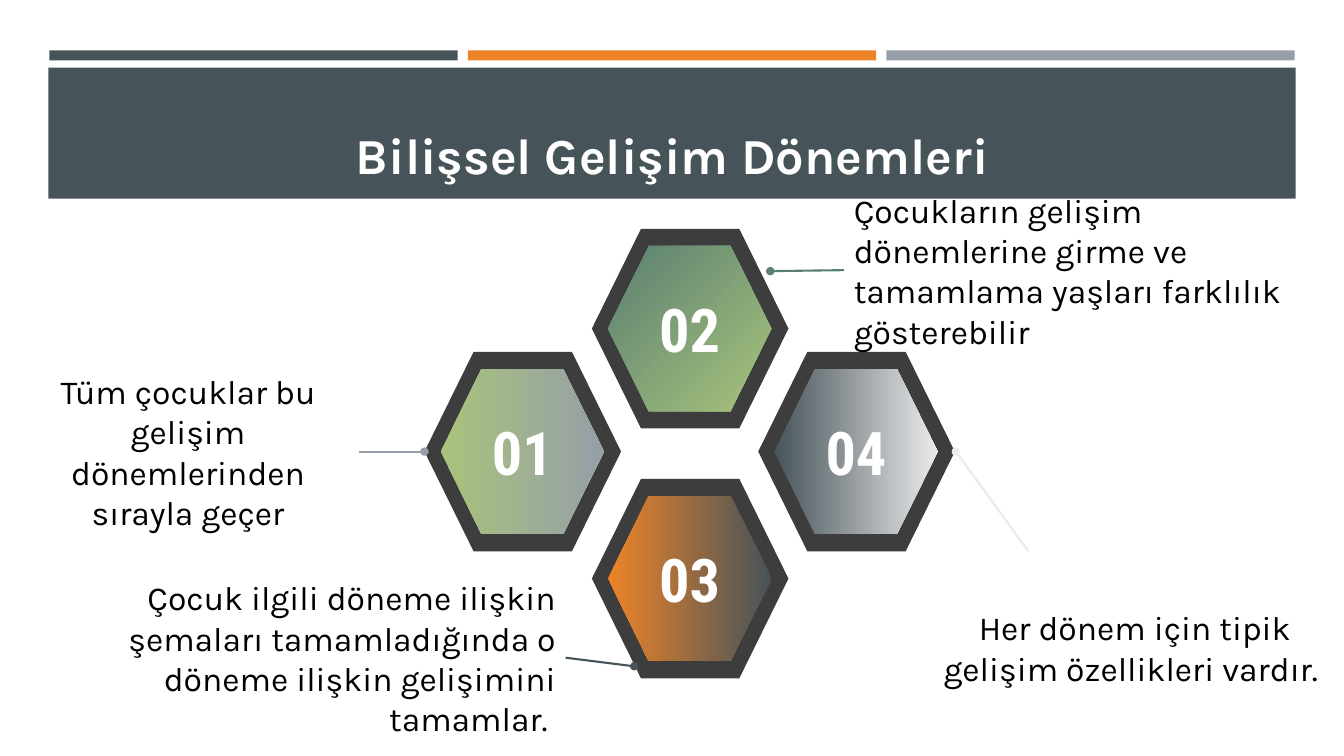
from lxml import etree
from pptx import Presentation
from pptx.dml.color import RGBColor
from pptx.enum.shapes import MSO_CONNECTOR, MSO_SHAPE
from pptx.enum.text import MSO_ANCHOR, PP_ALIGN
from pptx.oxml.ns import qn
from pptx.util import Pt

PX = 9144
RECT, HEX = MSO_SHAPE.RECTANGLE, MSO_SHAPE.HEXAGON
LINE = MSO_CONNECTOR.STRAIGHT
LEFT, CENTER, RIGHT = PP_ALIGN.LEFT, PP_ALIGN.CENTER, PP_ALIGN.RIGHT
MIDDLE, BOTTOM = MSO_ANCHOR.MIDDLE, MSO_ANCHOR.BOTTOM
WEST, EAST = 1, 3

COLORS = {
    "slate": "465359", "orange": "ED8428", "gray": "969FA7",
    "dark": "3D3D3D", "teal": "5A8071", "lime": "A9C37C",
    "pale": "EBEBEB", "white": "FFFFFF", "black": "000000",
}

CELLS = [
    ("02", 587, 227, "teal", "lime", 45),
    ("03", 587, 475, "orange", "slate", 0),
    ("01", 421, 349, "lime", "gray", 0),
    ("04", 752, 349, "slate", "pale", 0),
]

NOTES = [
    ("Tüm çocuklar bu gelişim dönemlerinden sırayla geçer",
     (17, 349, 339, 198), CENTER, EAST, (356, 448), (421, 448), "gray"),
    ("Çocuk ilgili döneme ilişkin şemaları tamamladığında o döneme "
     "ilişkin gelişimini tamamlar. ",
     (71, 593, 490, 119), RIGHT, EAST, (561, 652), (629, 661), "slate"),
    ("Çocukların gelişim dönemlerine girme ve tamamlama yaşları "
     "farklılık gösterebilir",
     (837, 196, 496, 144), LEFT, WEST, (837, 268), (764, 269), "teal"),
    ("Her dönem için tipik gelişim özellikleri vardır. ",
     (918, 574, 415, 137), CENTER, None, (1020, 547), (948, 448), "pale"),
]


def emu(nums):
    return [n * PX for n in nums]


def rgb(name):
    return RGBColor.from_string(COLORS[name])


def add_form(slide, kind, box, *tints, angle=0):
    form = slide.shapes.add_shape(kind, *emu(box))
    form.shadow.inherit = False
    form.line.fill.background()
    if len(tints) == 1:
        form.fill.solid()
        form.fill.fore_color.rgb = rgb(tints[0])
    else:
        form.fill.gradient()
        form.fill.gradient_angle = -angle % 360
        for stop, tint in zip(form.fill.gradient_stops, tints):
            stop.color.rgb = rgb(tint)


def add_text(slide, text, box, size=24, face="Karla", color="black",
             bold=False, align=CENTER, anchor=MIDDLE):
    label = slide.shapes.add_textbox(*emu(box))
    frame = label.text_frame
    frame.word_wrap = True
    frame.vertical_anchor = anchor
    frame.margin_left = frame.margin_right = 10 * PX
    frame.margin_top = frame.margin_bottom = 10 * PX
    para = frame.paragraphs[0]
    para.alignment = align
    run = para.add_run()
    run.text = text
    font = run.font
    font.size, font.name, font.bold = Pt(size), face, bold
    font.color.rgb = rgb(color)
    return label


def add_line(slide, start, end, color):
    link = slide.shapes.add_connector(LINE, *emu(start + end))
    link.line.width = Pt(1.5)
    link.line.color.rgb = rgb(color)
    props = link._element.spPr
    etree.SubElement(props.find(qn("a:ln")), qn("a:tailEnd"), type="oval")
    etree.SubElement(props, qn("a:effectLst"))
    return link


def add_cell(slide, text, x, y, start, end, angle):
    add_form(slide, HEX, (x, y, 195, 198), "dark")
    add_form(slide, HEX, (x + 16, y + 17, 162, 164), start, end, angle=angle)
    add_text(slide, text, (x + 46, y + 55, 102, 88), size=43,
             face="Roboto Condensed", color="white", bold=True)


def add_note(slide, text, box, align, side, start, end, color):
    label = add_text(slide, text, box, align=align)
    link = add_line(slide, start, end, color)
    if side is not None:
        link.begin_connect(label, side)


def main():
    deck = Presentation()
    deck.slide_width, deck.slide_height = emu((1333, 750))
    slide = deck.slides.add_slide(deck.slide_layouts[6])
    for i, tint in enumerate(("slate", "orange", "gray")):
        add_form(slide, RECT, (49 + i * 415, 50, 405, 10), tint)
    add_form(slide, RECT, (48, 67, 1237, 130), "slate")
    add_text(slide, "Bilişsel Gelişim Dönemleri", (64, 77, 1206, 116),
             size=36, color="white", bold=True, anchor=BOTTOM)
    for cell in CELLS:
        add_cell(slide, *cell)
    for note in NOTES:
        add_note(slide, *note)
    deck.save("out.pptx")


if __name__ == "__main__":
    main()
